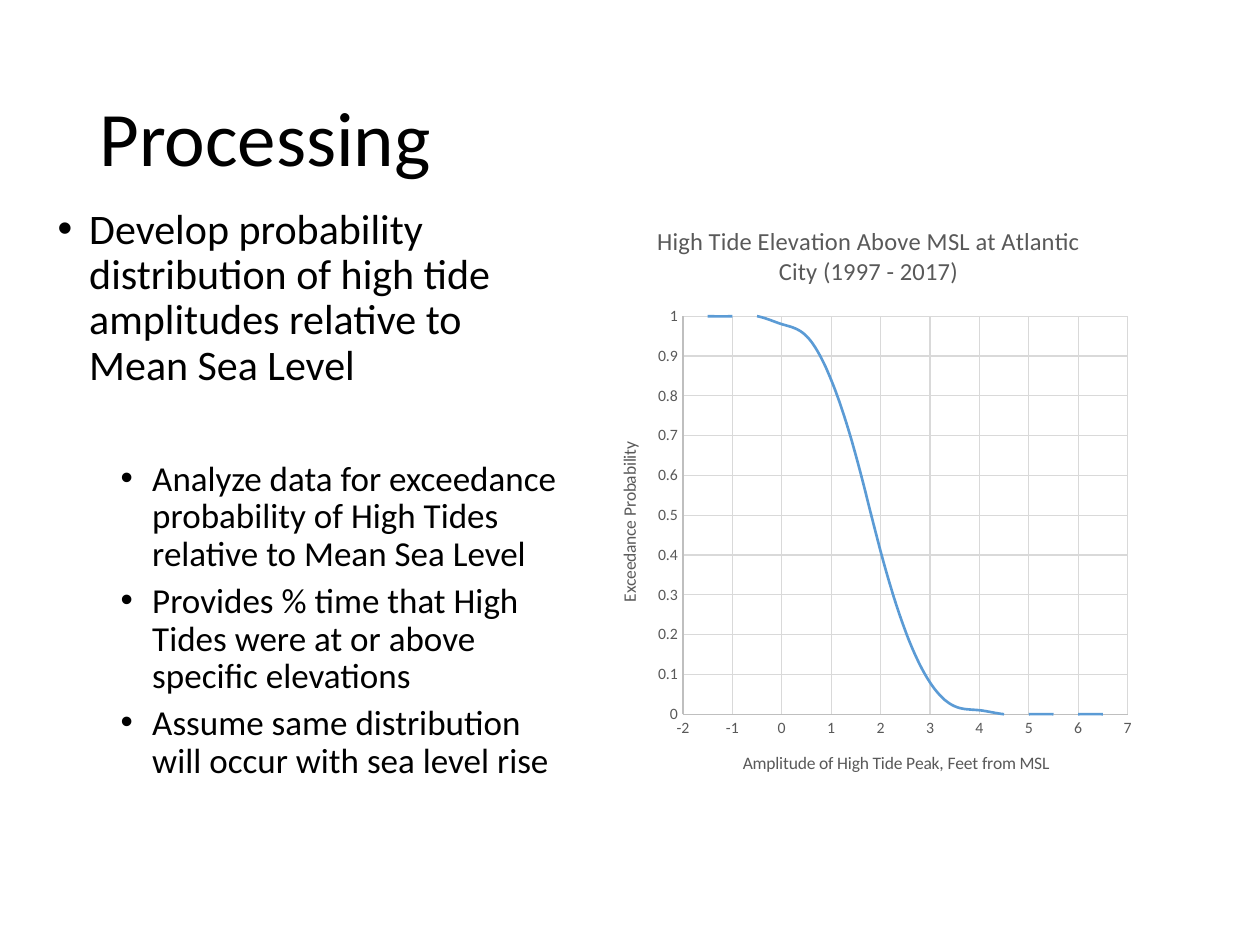
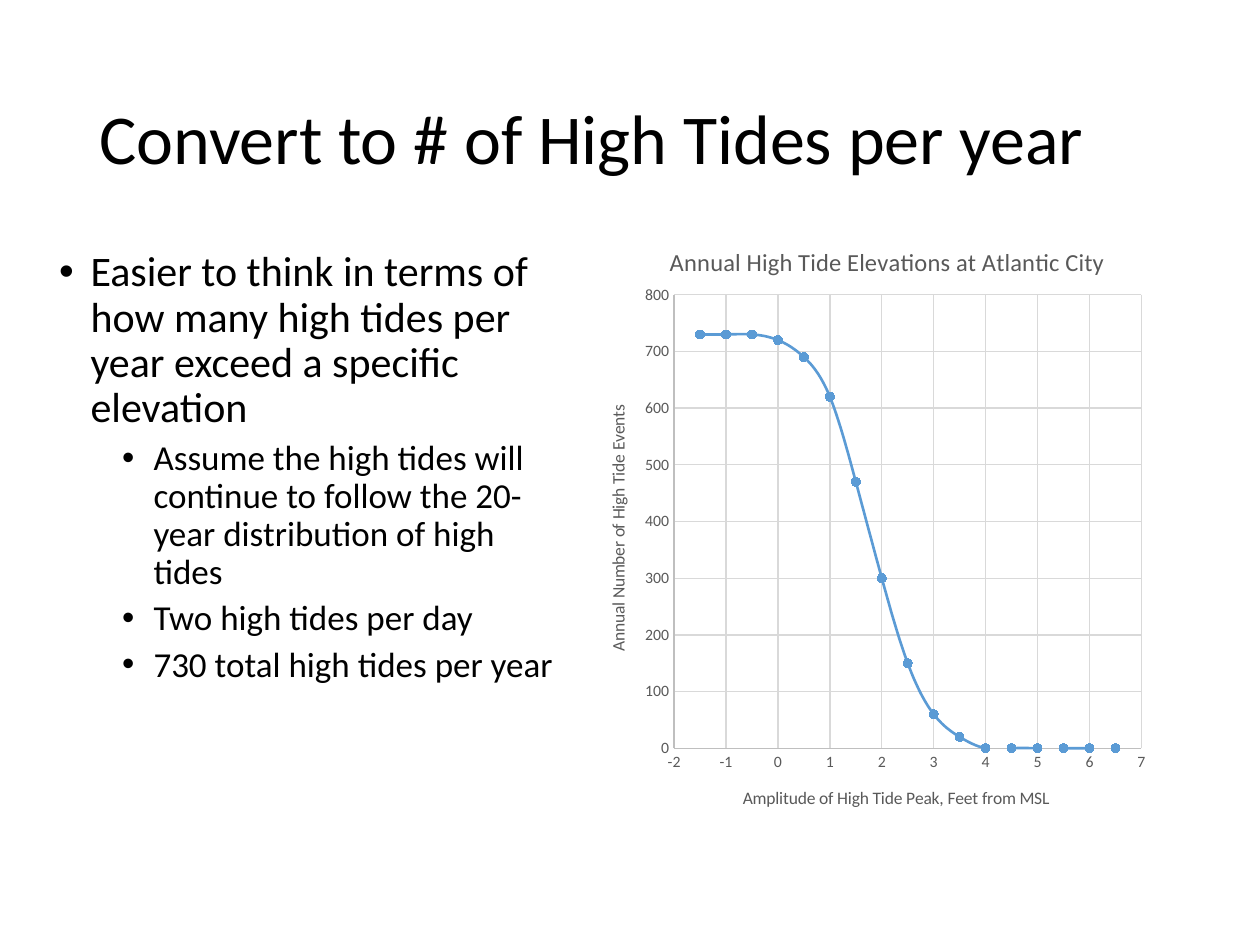
"""Two slides on high tide exceedance, each with bullets beside a scatter chart."""
from lxml.etree import SubElement
from pptx import Presentation
from pptx.chart.data import XyChartData
from pptx.dml.color import RGBColor
from pptx.enum.chart import XL_AXIS_CROSSES as CROSSES
from pptx.enum.chart import XL_CHART_TYPE as CHART
from pptx.enum.chart import XL_MARKER_STYLE as MARKER
from pptx.enum.chart import XL_TICK_MARK as TICK
from pptx.enum.text import MSO_ANCHOR as ANCHOR
from pptx.oxml.ns import qn
from pptx.util import Inches, Pt

FONT = "Calibri"
COLORS = {"text": "000000", "label": "595959", "axis": "BFBFBF",
          "grid": "D9D9D9", "curve": "5B9BD5"}
TITLE_AT = (0.69, 0.4, 8.62, 1.45)
LEVELS = [{"size": 24, "left": 0.25, "before": 10},
          {"size": 20, "left": 0.75, "before": 5}]
ELEVATIONS = [-1.5 + 0.5 * i for i in range(17)]
X_TITLE = "Amplitude of High Tide Peak, Feet from MSL"

SLIDES = [
    {"title": "Processing", "title_size": 44,
     "body_at": (0.36, 1.6, 4.25, 4.76), "gap": 36,
     "body": [
         (0, "Develop probability distribution of high tide amplitudes relative to Mean Sea Level"),
         (1, "Analyze data for exceedance probability of High Tides relative to Mean Sea Level"),
         (1, "Provides % time that High Tides were at or above specific elevations"),
         (1, "Assume same distribution will occur with sea level rise")],
     "chart": {
         "at": (4.72, 1.6, 4.34, 4.76), "type": CHART.XY_SCATTER_SMOOTH_NO_MARKERS,
         "title": ("High Tide Elevation Above MSL at Atlantic City (1997 - 2017)", (0.46, 0.14)),
         "x_title_at": (1.15, 4.34), "y_title": ("Exceedance Probability", (0.16, 1.88)),
         "y_max": 1, "y_step": 0.1, "plot": (0.7, 0.91, 3.53, 3.16),
         "values": [1, 1, 1, 0.98, 0.95, 0.84, 0.65, 0.41, 0.21, 0.08, 0.02, 0.01,
                    0, 0, 0, 0, 0]}},
    {"title": "Convert to # of High Tides per year", "title_size": 40,
     "body_at": (0.37, 1.94, 4.25, 4.76), "gap": 0,
     "body": [
         (0, "Easier to think in terms of how many high tides per year exceed a specific elevation"),
         (1, "Assume the high tides will continue to follow the 20-year distribution of high tides"),
         (1, "Two high tides per day"),
         (1, "730 total high tides per year")],
     "chart": {
         "at": (4.72, 1.76, 4.69, 4.94), "type": CHART.XY_SCATTER_SMOOTH,
         "title": ("Annual High Tide Elevations at Atlantic City", (0.56, 0.15)),
         "x_title_at": (1.15, 4.46), "y_title": ("Annual Number of High Tide Events", (0.07, 1.43)),
         "y_max": 800, "y_step": 100, "plot": (0.63, 0.58, 3.71, 3.6),
         "values": [730, 730, 730, 720, 690, 620, 470, 300, 150, 60, 20, 0,
                    0, 0, 0, 0, 0]}},
]


def rgb(name):
    return RGBColor.from_string(COLORS[name])


def style_font(font, size, color):
    font.name, font.size, font.bold = FONT, Pt(size), False
    font.color.rgb = rgb(color)


def style_line(line, color, width):
    line.color.rgb = rgb(color)
    line.width = Pt(width)


def add_box(slide, at):
    tf = slide.shapes.add_textbox(*map(Inches, at)).text_frame
    tf.word_wrap = True
    return tf


def add_title(slide, text, size):
    tf = add_box(slide, TITLE_AT)
    tf.vertical_anchor = ANCHOR.MIDDLE
    p = tf.paragraphs[0]
    p.text, p.line_spacing = text, 0.9
    style_font(p.runs[0].font, size, "text")


def add_body(slide, at, items, gap):
    tf = add_box(slide, at)
    for i, (level, text) in enumerate(items):
        look = LEVELS[level]
        p = tf.paragraphs[0] if i == 0 else tf.add_paragraph()
        p.text, p.level, p.line_spacing = text, level, 0.9
        p.space_before = Pt(0 if i == 0 else look["before"] + (gap if i == 1 else 0))
        pPr = p._p.get_or_add_pPr()
        pPr.set("marL", str(Inches(look["left"])))
        pPr.set("indent", str(Inches(-0.25)))
        SubElement(pPr, qn("a:buFont"), typeface="Arial")
        SubElement(pPr, qn("a:buChar"), char="•")
        style_font(p.runs[0].font, look["size"], "text")


def place(parent, index, at, size, inner=False):
    """Fix a chart part at a position in inches within a chart of the given size."""
    for old in parent.findall(qn("c:layout")):
        parent.remove(old)
    layout = SubElement(parent, qn("c:layout"))
    parent.insert(index, layout)
    manual = SubElement(layout, qn("c:manualLayout"))
    if inner:
        SubElement(manual, qn("c:layoutTarget"), val="inner")
    for key in ("xMode", "yMode"):
        SubElement(manual, qn("c:" + key), val="edge")
    for key, length, whole in zip("xywh", at, size * 2):
        SubElement(manual, qn("c:" + key), val=str(round(length / whole, 4)))


def set_chart_title(title, text, points, at, size, upright=False):
    tf = title.text_frame
    tf.text = text
    style_font(tf.paragraphs[0].runs[0].font, points, "label")
    if upright:
        bodyPr = tf._txBody.find(qn("a:bodyPr"))
        bodyPr.set("rot", "-5400000")
        bodyPr.set("vert", "horz")
    place(title._element, 1, at, size)


def style_axis(axis, low, high, step):
    axis.minimum_scale, axis.maximum_scale, axis.major_unit = low, high, step
    axis.major_tick_mark = axis.minor_tick_mark = TICK.NONE
    axis.has_major_gridlines = True
    style_line(axis.major_gridlines.format.line, "grid", 0.75)
    style_line(axis.format.line, "axis", 0.75)
    style_font(axis.tick_labels.font, 9, "label")
    axis.tick_labels.number_format = "General"
    axis.tick_labels.number_format_is_linked = False
    axis.crosses = CROSSES.MINIMUM


def add_tide_chart(slide, c):
    data = XyChartData()
    points = data.add_series("Series 1")
    for x, y in zip(ELEVATIONS, c["values"]):
        points.add_data_point(x, y)
    chart = slide.shapes.add_chart(c["type"], *map(Inches, c["at"]), data).chart
    size = c["at"][2:]
    style_font(chart.font, 10, "text")
    chart.has_legend = False
    x_axis, y_axis = chart.category_axis, chart.value_axis
    style_axis(x_axis, -2, 7, 1)
    style_axis(y_axis, 0, c["y_max"], c["y_step"])
    text, at = c["title"]
    set_chart_title(chart.chart_title, text, 14, at, size)
    set_chart_title(x_axis.axis_title, X_TITLE, 10, c["x_title_at"], size)
    text, at = c["y_title"]
    set_chart_title(y_axis.axis_title, text, 10, at, size, upright=True)
    plot = chart.plots[0]
    plot.vary_by_categories = False
    place(plot._element.getparent(), 0, c["plot"], size, inner=True)
    series = plot.series[0]
    series._element.find(qn("c:smooth")).set("val", "1")
    style_line(series.format.line, "curve", 1.5)
    if c["type"] == CHART.XY_SCATTER_SMOOTH:
        marker = series.marker
        marker.style, marker.size = MARKER.CIRCLE, 5
        marker.format.fill.solid()
        marker.format.fill.fore_color.rgb = rgb("curve")
        style_line(marker.format.line, "curve", 0.75)


def main():
    prs = Presentation()
    prs.slide_width, prs.slide_height = Inches(10), Inches(7.5)
    for s in SLIDES:
        slide = prs.slides.add_slide(prs.slide_layouts[6])
        add_title(slide, s["title"], s["title_size"])
        add_body(slide, s["body_at"], s["body"], s["gap"])
        add_tide_chart(slide, s["chart"])
    prs.save("out.pptx")


if __name__ == "__main__":
    main()
